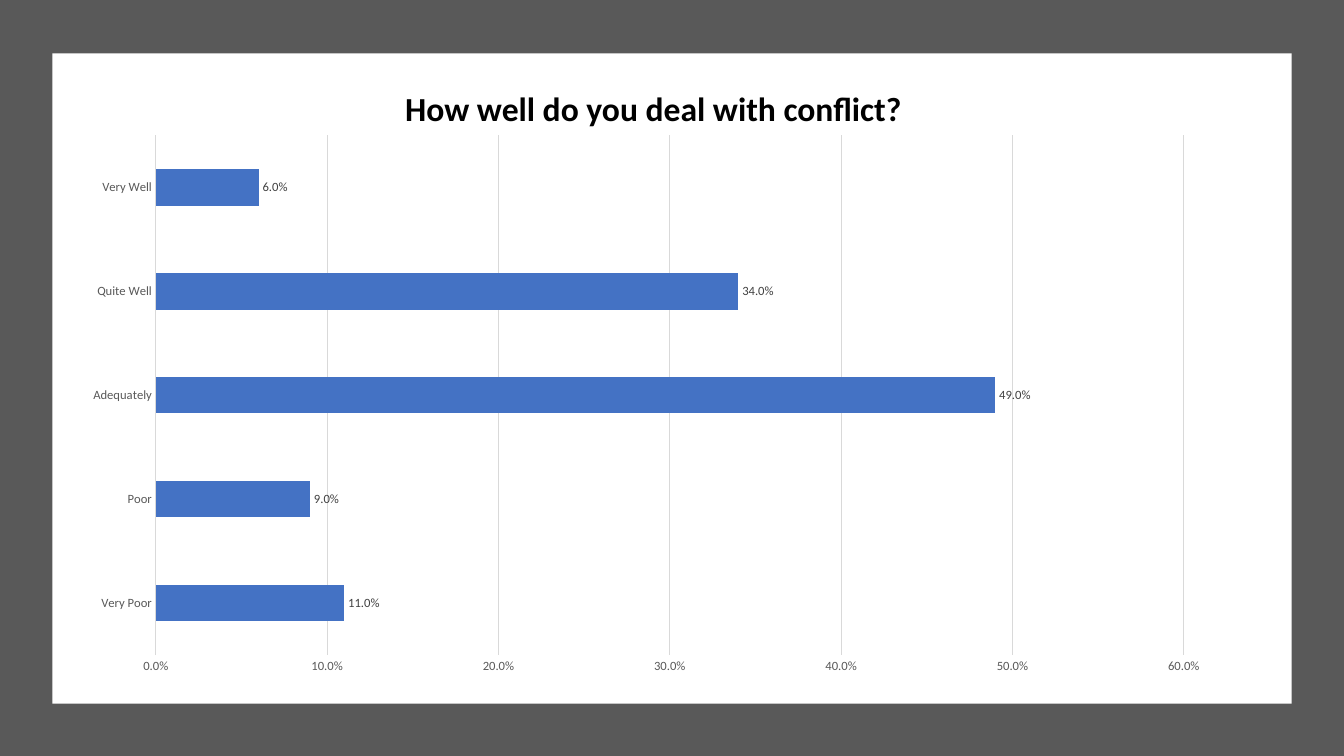
import pptx
import pptx.chart.data
import pptx.dml.color
import pptx.enum.chart
import pptx.enum.shapes
import pptx.enum.text
import pptx.oxml
import pptx.oxml.ns
import pptx.util

COLORS = {
    "frame": "595959", "panel": "FFFFFF", "title": "000000", "bar": "4472C4",
    "axis": "595959", "grid": "D9D9D9", "value": "404040",
}
FONT = "Calibri"
PERCENT = "0.0%"


def rgb(name):
    return pptx.dml.color.RGBColor.from_string(COLORS[name])


def style_font(font, size, color):
    font.name = FONT
    font.size = pptx.util.Pt(size)
    font.color.rgb = rgb(color)


deck = pptx.Presentation()
deck.slide_width = pptx.util.Inches(13.33)
deck.slide_height = pptx.util.Inches(7.5)
slide = deck.slides.add_slide(deck.slide_layouts[6])

# Dark frame with the white panel on it
for left, top, width, height, color in (
    (0, 0, 13.33, 7.5, "frame"),
    (0.52, 0.53, 12.29, 6.45, "panel"),
):
    backdrop = slide.shapes.add_shape(
        pptx.enum.shapes.MSO_SHAPE.RECTANGLE,
        *map(pptx.util.Inches, (left, top, width, height)))
    backdrop.shadow.inherit = False
    backdrop.fill.solid()
    backdrop.fill.fore_color.rgb = rgb(color)
    backdrop.line.fill.background()

# Survey answers, from the bottom bar up
answers = pptx.chart.data.CategoryChartData(number_format=PERCENT)
answers.categories = ["Very Poor", "Poor", "Adequately", "Quite Well", "Very Well"]
answers.add_series("Series 1", (0.11, 0.09, 0.49, 0.34, 0.06))
survey = slide.shapes.add_chart(
    pptx.enum.chart.XL_CHART_TYPE.BAR_CLUSTERED,
    *map(pptx.util.Inches, (0.7, 1.23, 11.43, 5.57)), answers).chart
survey.has_legend = False
survey.has_title = False
style_font(survey.font, 10, "title")

# Bars and their values
bars = survey.plots[0]
bars.gap_width = 182
bars.vary_by_categories = False
bars.series[0].format.fill.solid()
bars.series[0].format.fill.fore_color.rgb = rgb("bar")
bars.has_data_labels = True
values = bars.data_labels
values.show_value = True
values.number_format = PERCENT
values.number_format_is_linked = False
values.position = pptx.enum.chart.XL_LABEL_POSITION.OUTSIDE_END
style_font(values.font, 9, "value")

# Axes
ratings, shares = survey.category_axis, survey.value_axis
for axis in (ratings, shares):
    axis.major_tick_mark = pptx.enum.chart.XL_TICK_MARK.NONE
    axis.minor_tick_mark = pptx.enum.chart.XL_TICK_MARK.NONE
    style_font(axis.tick_labels.font, 9, "axis")
shares.minimum_scale, shares.maximum_scale, shares.major_unit = 0, 0.6, 0.1
shares.tick_labels.number_format = PERCENT
shares.tick_labels.number_format_is_linked = False
shares.format.line.fill.background()
shares.has_major_gridlines = True
for line in (ratings.format.line, shares.major_gridlines.format.line):
    line.color.rgb = rgb("grid")
    line.width = pptx.util.Pt(0.75)

# Plot area as shares of the chart
plot_area = survey.element.find(".//" + pptx.oxml.ns.qn("c:plotArea"))
for old_layout in plot_area.findall(pptx.oxml.ns.qn("c:layout")):
    plot_area.remove(old_layout)
plot_area.insert(0, pptx.oxml.parse_xml(
    f'<c:layout {pptx.oxml.ns.nsdecls("c")}><c:manualLayout>'
    '<c:layoutTarget val="inner"/><c:xMode val="edge"/><c:yMode val="edge"/>'
    '<c:x val="0.074"/><c:y val="0.02"/><c:w val="0.892"/><c:h val="0.926"/>'
    '</c:manualLayout></c:layout>'))

# Question
question = slide.shapes.add_textbox(
    *map(pptx.util.Inches, (3.92, 0.82, 7, 0.5))).text_frame
question.word_wrap = True
question.auto_size = pptx.enum.text.MSO_AUTO_SIZE.SHAPE_TO_FIT_TEXT
heading = question.paragraphs[0]
heading.text = "How well do you deal with conflict?"
style_font(heading.font, 24, "title")
heading.font.bold = True

deck.save("out.pptx")
